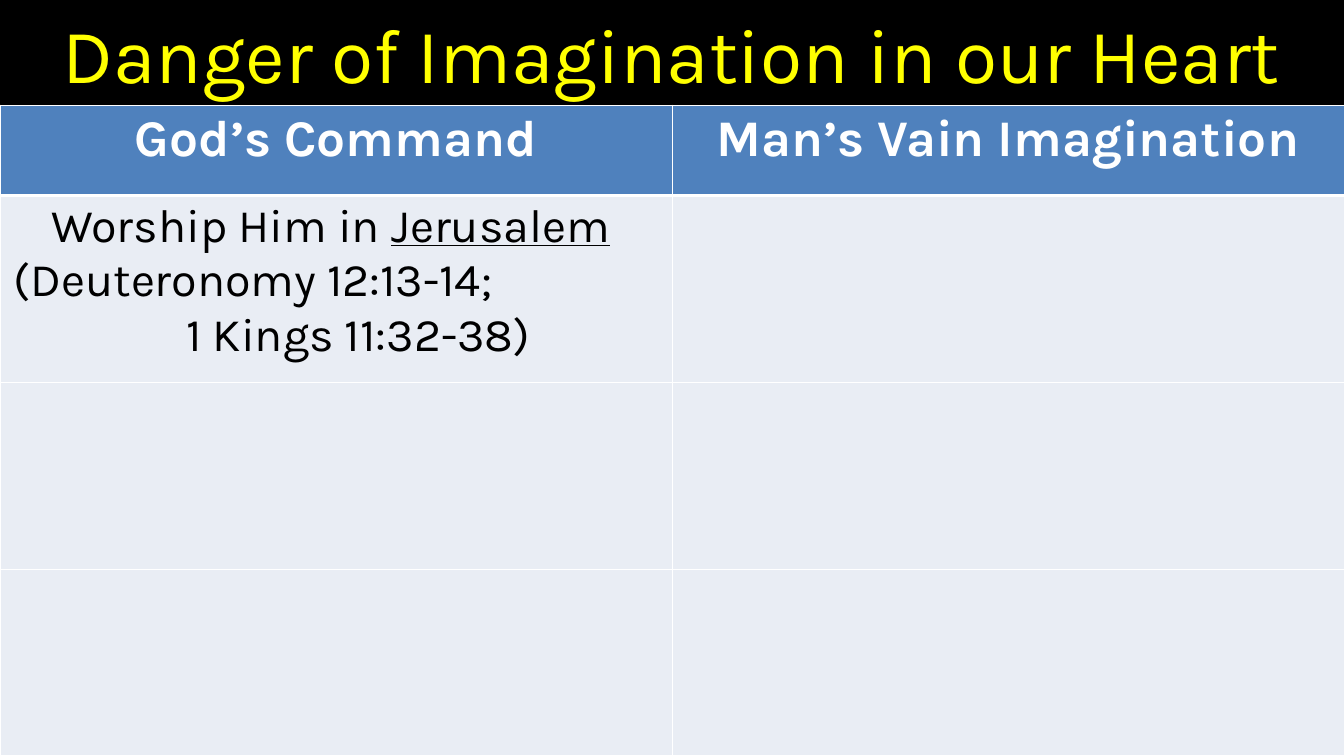
import pptx
import pptx.util
import pptx.dml.color
import pptx.enum.text
import pptx.oxml.ns
import lxml.etree

Pt = pptx.util.Pt
RGBColor = pptx.dml.color.RGBColor
ALIGN = pptx.enum.text.PP_ALIGN
ANCHOR = pptx.enum.text.MSO_ANCHOR

BLACK = RGBColor(0x00, 0x00, 0x00)
WHITE = RGBColor(0xFF, 0xFF, 0xFF)
YELLOW = RGBColor(0xFF, 0xFF, 0x00)
HEADER_BLUE = RGBColor(0x4F, 0x81, 0xBD)
BODY_GREY = RGBColor(0xE9, 0xED, 0xF4)
FONT = "Karla"

TITLE = "Danger of Imagination in our Heart"
HEADERS = ["God’s Command", "Man’s Vain Imagination"]
COMMAND = [
    {"text": [("Worship Him in ", False), ("Jerusalem", True), (" ", False)]},
    {"text": "(Deuteronomy 12:13-14;", "align": ALIGN.LEFT, "indent": 2},
    {"text": "1 Kings 11:32-38)", "indent": 38},
]

WIDTH, HEIGHT = 1152, 648
TITLE_HEIGHT = 90
HEADER_HEIGHT = 77.5
BODY_ROWS = 3
MARGIN_X = 10
TITLE_MARGIN_Y, CELL_MARGIN_Y = 5, 3.6


def write(paragraph, text, size=40, color=BLACK, bold=False, align=ALIGN.CENTER, indent=0):
    paragraph.alignment = align
    if indent:
        paragraph._p.get_or_add_pPr().set("marL", str(Pt(indent)))
    pieces = [(text, False)] if isinstance(text, str) else text
    for words, underline in pieces:
        run = paragraph.add_run()
        run.text = words
        run.font.name = FONT
        run.font.size = Pt(size)
        run.font.bold = bold
        run.font.underline = underline
        run.font.color.rgb = color


def set_margins(box, margin_y):
    box.margin_left = box.margin_right = Pt(MARGIN_X)
    box.margin_top = box.margin_bottom = Pt(margin_y)


def set_borders(cell, widths):
    properties = cell._tc.get_or_add_tcPr()
    qn = pptx.oxml.ns.qn
    for position, (side, width) in enumerate(widths.items()):
        line = lxml.etree.Element(qn("a:" + side), w=str(Pt(width)))
        fill = lxml.etree.SubElement(line, qn("a:solidFill"))
        lxml.etree.SubElement(fill, qn("a:srgbClr"), val=str(WHITE))
        properties.insert(position, line)


def add_title(slide):
    box = slide.shapes.add_textbox(0, 0, Pt(WIDTH), Pt(TITLE_HEIGHT))
    frame = box.text_frame
    frame.word_wrap = True
    frame.vertical_anchor = ANCHOR.MIDDLE
    set_margins(frame, TITLE_MARGIN_Y)
    write(frame.paragraphs[0], TITLE, size=66, color=YELLOW)


def add_comparison(slide):
    table_height = HEIGHT - TITLE_HEIGHT
    body_height = (table_height - HEADER_HEIGHT) / BODY_ROWS
    table = slide.shapes.add_table(
        BODY_ROWS + 1, len(HEADERS), 0, Pt(TITLE_HEIGHT), Pt(WIDTH), Pt(table_height)
    ).table
    for column in table.columns:
        column.width = Pt(WIDTH / len(HEADERS))
    for index, row in enumerate(table.rows):
        is_header = index == 0
        row.height = Pt(HEADER_HEIGHT if is_header else body_height)
        for cell in row.cells:
            set_margins(cell, CELL_MARGIN_Y)
            cell.fill.solid()
            cell.fill.fore_color.rgb = HEADER_BLUE if is_header else BODY_GREY
            top = 3 if index == 1 else 1
            bottom = 3 if is_header else 1
            set_borders(cell, {"lnL": 1, "lnR": 1, "lnT": top, "lnB": bottom})
    for column, header in enumerate(HEADERS):
        paragraph = table.cell(0, column).text_frame.paragraphs[0]
        write(paragraph, header, size=44, color=WHITE, bold=True)
    frame = table.cell(1, 0).text_frame
    for index, line in enumerate(COMMAND):
        write(frame.add_paragraph() if index else frame.paragraphs[0], **line)


def main():
    presentation = pptx.Presentation()
    presentation.slide_width = Pt(WIDTH)
    presentation.slide_height = Pt(HEIGHT)
    slide = presentation.slides.add_slide(presentation.slide_layouts[6])
    slide.background.fill.solid()
    slide.background.fill.fore_color.rgb = BLACK
    add_title(slide)
    add_comparison(slide)
    presentation.save("out.pptx")


if __name__ == "__main__":
    main()
